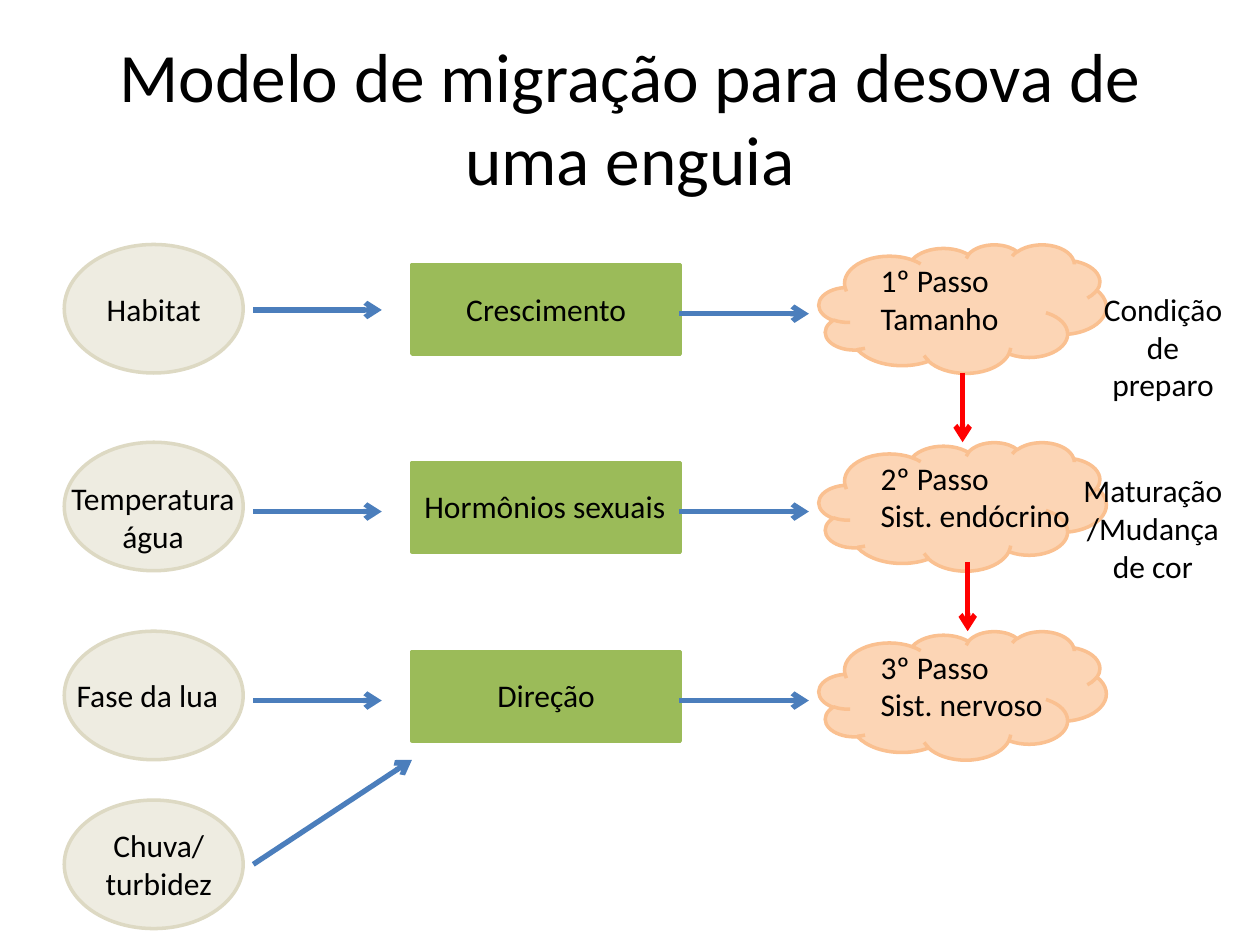
from lxml.etree import SubElement
from pptx import Presentation
from pptx.dml.color import RGBColor
from pptx.enum.shapes import MSO_CONNECTOR as Connector, MSO_SHAPE as Shape
from pptx.enum.text import MSO_ANCHOR as Anchor, MSO_AUTO_SIZE as AutoSize, PP_ALIGN as Align
from pptx.oxml.ns import qn
from pptx.util import Inches, Pt

BLACK = RGBColor(0x00, 0x00, 0x00)
CREAM = RGBColor(0xEE, 0xEC, 0xE1)
CREAM_EDGE = RGBColor(0xDD, 0xD9, 0xC3)
GREEN = RGBColor(0x9B, 0xBB, 0x59)
PEACH = RGBColor(0xFC, 0xD5, 0xB5)
PEACH_EDGE = RGBColor(0xFA, 0xC0, 0x90)
BLUE = RGBColor(0x4B, 0x7E, 0xBC)
RED = RGBColor(0xFF, 0x00, 0x00)

ROW_TOPS = [1.94, 3.51, 5.01, 6.35]
ROW_HEIGHT = 1.02
LINE_HEIGHTS = {1: 0.4, 2: 0.71, 3: 1.01}


def format_text(frame, size, align):
    for paragraph in frame.paragraphs:
        paragraph.alignment = align
        for run in paragraph.runs:
            run.font.name = "Calibri"
            run.font.size = Pt(size)
            run.font.color.rgb = BLACK


def add_label(slide, text, left, top, width, lines, align=Align.CENTER):
    label = slide.shapes.add_textbox(
        Inches(left), Inches(top), Inches(width), Inches(LINE_HEIGHTS[lines]))
    label.text_frame.word_wrap = True
    label.text_frame.text = text
    format_text(label.text_frame, 18, align)


def add_block(slide, kind, left, top, width, height, fill, edge):
    block = slide.shapes.add_shape(
        kind, Inches(left), Inches(top), Inches(width), Inches(height))
    block.shadow.inherit = False
    block.fill.solid()
    block.fill.fore_color.rgb = fill
    block.line.color.rgb = edge
    block.line.width = Pt(2)


def add_arrow(slide, start, end, color):
    arrow = slide.shapes.add_connector(
        Connector.STRAIGHT, *(Inches(value) for value in start + end))
    arrow.line.color.rgb = color
    arrow.line.width = Pt(3)
    SubElement(arrow.line._get_or_add_ln(), qn("a:tailEnd"), type="arrow")
    SubElement(arrow._element.spPr, qn("a:effectLst"))


def add_title(slide, left, top, width, height):
    title = slide.shapes.title
    title.left, title.top = Inches(left), Inches(top)
    title.width, title.height = Inches(width), Inches(height)
    frame = title.text_frame
    frame.text = "Modelo de migração para desova de uma enguia"
    frame.auto_size = AutoSize.NONE
    frame.vertical_anchor = Anchor.MIDDLE
    format_text(frame, 39.6, Align.CENTER)


def add_factors(slide, left, width):
    for top in ROW_TOPS:
        add_block(slide, Shape.OVAL, left, top, width, ROW_HEIGHT, CREAM, CREAM_EDGE)
    habitat, temperature, moon, rain = ROW_TOPS
    add_label(slide, "Habitat", left, habitat + 0.31, width, 1)
    add_label(slide, "Temperatura água", left - 0.08, temperature + 0.24, width + 0.15, 2)
    add_label(slide, "Fase da lua", left, moon + 0.31, width, 1, Align.LEFT)
    add_label(slide, "Chuva/\nturbidez", left, rain + 0.16, width + 0.08, 2)


def add_processes(slide, left, width):
    processes = [("Crescimento", Align.CENTER), ("Hormônios sexuais", Align.LEFT),
                 ("Direção", Align.CENTER)]
    for top, (name, align) in zip(ROW_TOPS, processes):
        add_block(slide, Shape.RECTANGLE, left, top + 0.16, width, 0.71, GREEN, GREEN)
        add_label(slide, name, left, top + 0.31, width, 1, align)


def add_steps(slide, left, width):
    steps = ["1º Passo\nTamanho", "2º Passo\nSist. endócrino", "3º Passo\nSist. nervoso"]
    for top, step in zip(ROW_TOPS, steps):
        add_block(slide, Shape.CLOUD, left, top, width, ROW_HEIGHT, PEACH, PEACH_EDGE)
        add_label(slide, step, left + 0.39, top + 0.08, 1.73, 2, Align.LEFT)


def add_outcomes(slide, right):
    outcomes = [("Condição de preparo", 2.25, 1.22), ("Maturação/Mudança de cor", 3.69, 1.38)]
    for outcome, top, width in outcomes:
        add_label(slide, outcome, right - width, top, width, 3)


def add_flow(slide):
    for x, bottom in [(7.64, 3.51), (7.68, 5.01)]:
        add_arrow(slide, (x, bottom - 0.55), (x, bottom), RED)
    for factor_y, process_y in [(2.46, 2.49), (4.06, 4.06), (5.56, 5.56)]:
        add_arrow(slide, (2.01, factor_y), (3.03, factor_y), BLUE)
        add_arrow(slide, (5.39, process_y), (6.42, process_y), BLUE)
    add_arrow(slide, (2.01, 6.86), (3.27, 6.03), BLUE)


def main():
    deck = Presentation()
    deck.slide_width, deck.slide_height = Inches(10), Inches(7.5)
    slide = deck.slides.add_slide(deck.slide_layouts[5])
    add_title(slide, 0.5, 0.3, 9, 1.25)
    add_factors(slide, 0.51, 1.42)
    add_processes(slide, 3.27, 2.13)
    add_steps(slide, 6.5, 2.28)
    add_outcomes(slide, 9.84)
    add_flow(slide)
    deck.save("out.pptx")


if __name__ == "__main__":
    main()
